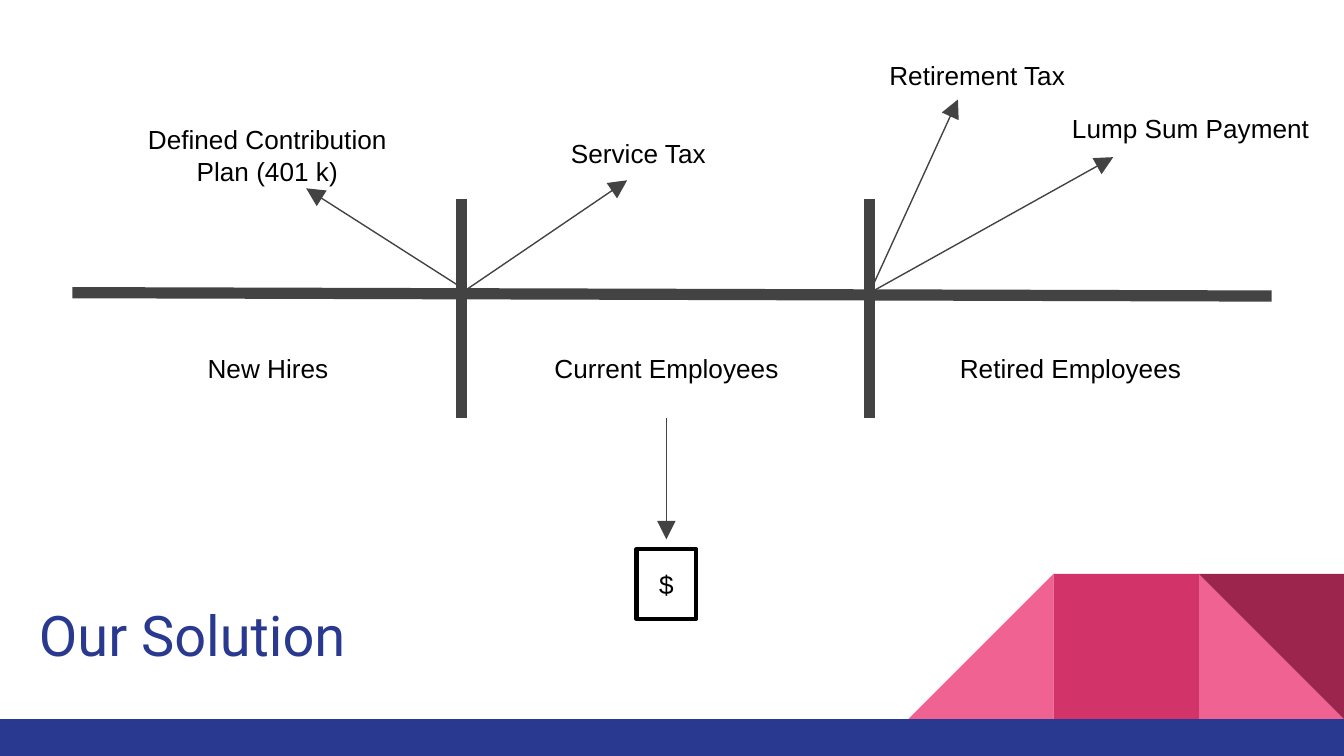
from pptx import Presentation
from pptx.dml.color import RGBColor
from pptx.enum.shapes import MSO_CONNECTOR, MSO_SHAPE
from pptx.enum.text import MSO_ANCHOR, PP_ALIGN
from pptx.oxml.ns import qn
from pptx.util import Pt
from lxml import etree

LEFT, CENTER = PP_ALIGN.LEFT, PP_ALIGN.CENTER
TOP, MIDDLE = MSO_ANCHOR.TOP, MSO_ANCHOR.MIDDLE
RECTANGLE, TRIANGLE = MSO_SHAPE.RECTANGLE, MSO_SHAPE.RIGHT_TRIANGLE
STRAIGHT = MSO_CONNECTOR.STRAIGHT

WIDTH, HEIGHT = 720, 405
BAND_TOP = 385.2
TILE = 77.8


def color(value):
    return RGBColor.from_string(value)


def write_text(shape, text, size=14, font="Arial", fill="000000",
               align=LEFT, anchor=TOP):
    frame = shape.text_frame
    frame.word_wrap = True
    frame.vertical_anchor = anchor
    frame.margin_left = frame.margin_right = Pt(7.2)
    frame.margin_top = frame.margin_bottom = Pt(7.2)
    paragraph = frame.paragraphs[0]
    paragraph.alignment = align
    run = paragraph.add_run()
    run.text = text
    run.font.size = Pt(size)
    run.font.name = font
    run.font.color.rgb = color(fill)


class SlideBuilder:
    pink, rose, wine, blue = "F06292", "D23369", "9C254D", "2A3990"
    gray, black = "434343", "000000"

    def __init__(self, slide):
        self.slide = slide

    def title(self, text, left, top, width, height):
        shape = self.slide.shapes.title
        shape.left, shape.top = Pt(left), Pt(top)
        shape.width, shape.height = Pt(width), Pt(height)
        write_text(shape, text, size=30, font="Roboto", fill=self.blue, anchor=MIDDLE)

    def shape(self, kind, left, top, width, height, fill=None, outline=None,
              rotation=0, flip=False):
        shape = self.slide.shapes.add_shape(kind, Pt(left), Pt(top), Pt(width), Pt(height))
        shape.shadow.inherit = False
        shape.rotation = rotation
        if flip:
            shape.element.spPr.get_or_add_xfrm().set("flipH", "1")
        if fill:
            shape.fill.solid()
            shape.fill.fore_color.rgb = color(fill)
        else:
            shape.fill.background()
        if outline:
            shape.line.color.rgb = color(outline)
            shape.line.width = Pt(2.25)
        else:
            shape.line.fill.background()
        return shape

    def label(self, text, left, top, width, height, align=LEFT):
        box = self.slide.shapes.add_textbox(Pt(left), Pt(top), Pt(width), Pt(height))
        write_text(box, text, align=align)

    def line(self, start, end, width=6):
        connector = self.slide.shapes.add_connector(
            STRAIGHT, Pt(start[0]), Pt(start[1]), Pt(end[0]), Pt(end[1]))
        connector.line.color.rgb = color(self.gray)
        connector.line.width = Pt(width)
        etree.SubElement(connector.element.spPr, qn("a:effectLst"))
        return connector

    def arrow(self, start, end):
        connector = self.line(start, end, width=0.75)
        tail = etree.SubElement(connector.line._get_or_add_ln(), qn("a:tailEnd"))
        tail.set("type", "triangle")
        tail.set("w", "lg")
        tail.set("len", "lg")

    def corner_art(self):
        tiles = [
            (1, TRIANGLE, self.pink, 0, False),
            (3, TRIANGLE, self.pink, 0, True),
            (2, RECTANGLE, self.rose, 0, False),
            (1, TRIANGLE, self.wine, 180, False),
        ]
        for column, kind, fill, rotation, flip in tiles:
            self.shape(kind, WIDTH - column * TILE, BAND_TOP - TILE, TILE, TILE,
                       fill=fill, rotation=rotation, flip=flip)
        self.shape(RECTANGLE, 0, BAND_TOP, WIDTH, HEIGHT - BAND_TOP, fill=self.blue)


def main():
    presentation = Presentation()
    presentation.slide_width, presentation.slide_height = Pt(WIDTH), Pt(HEIGHT)
    builder = SlideBuilder(presentation.slides.add_slide(presentation.slide_layouts[5]))

    builder.corner_art()
    builder.title("Our Solution", 13.7, 314, 260, 51)

    builder.line((38.8, 156.8), (681.2, 158.6))
    for divider in (247.2, 465.8):
        builder.line((divider, 106.6), (divider, 224))

    edges = (38.8, 248.4, 465.8, 681.2)
    stages = ("New Hires", "Current Employees", "Retired Employees")
    for stage, left, right in zip(stages, edges, edges[1:]):
        builder.label(stage, left, 181.4, right - left, 42.5, align=CENTER)

    arrows = [
        ((248.4, 154.8), (164, 100.9)),
        ((247.2, 157), (336, 96.6)),
        ((465.8, 157), (513.2, 53.3)),
        ((465.8, 157), (596.4, 84.2)),
        ((357, 224), (357, 289)),
    ]
    for start, end in arrows:
        builder.arrow(start, end)

    labels = [
        ("Defined Contribution Plan (401 k)", 62.6, 59, 161.3, CENTER),
        ("Service Tax", 298.8, 66.2, 112.3, LEFT),
        ("Retirement Tax", 469.4, 24.5, 112.3, LEFT),
        ("Lump Sum Payment", 567.2, 53, 146.9, LEFT),
    ]
    for text, left, top, width, align in labels:
        builder.label(text, left, top, width, 24.5, align=align)

    dollar_box = builder.shape(RECTANGLE, 341, 294.2, 32, 37.4, outline=builder.black)
    write_text(dollar_box, "$", align=CENTER, anchor=MIDDLE)

    presentation.save("out.pptx")


if __name__ == "__main__":
    main()
